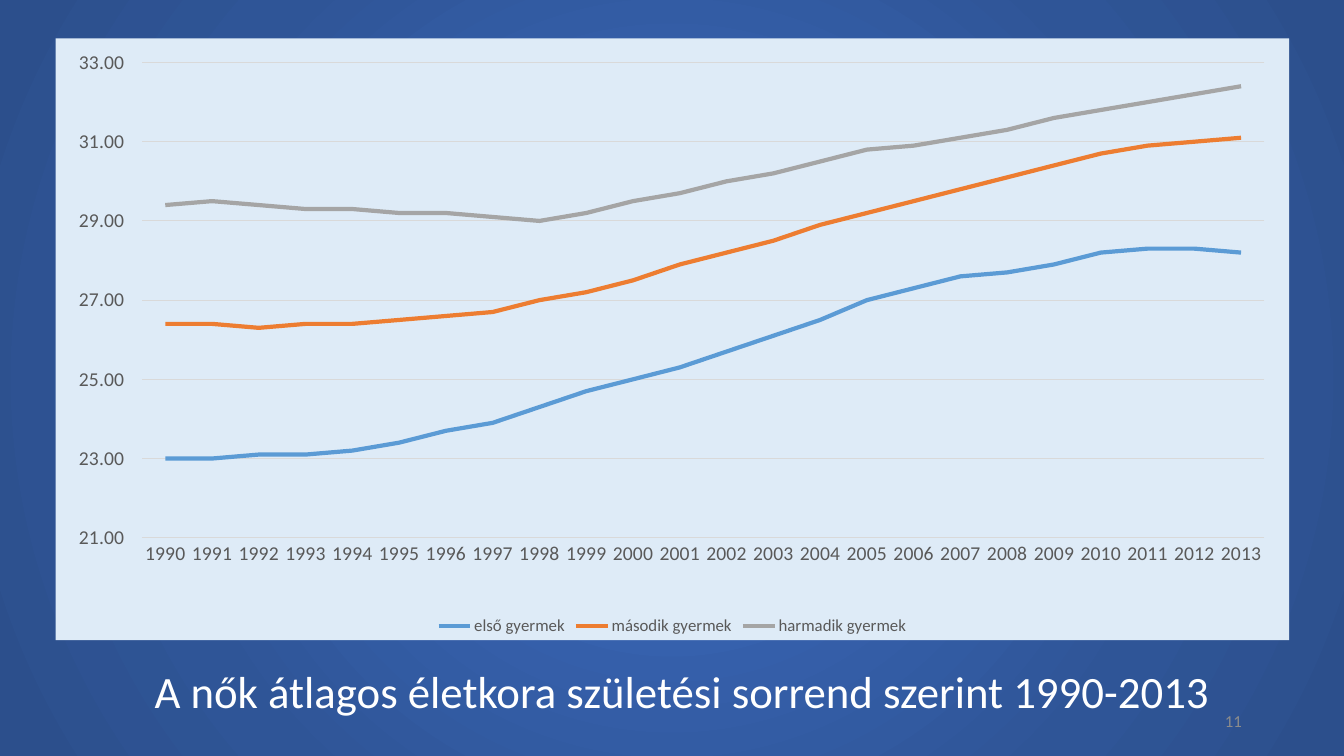
import pptx
import pptx.chart.data
import pptx.dml.color
import pptx.enum.chart
import pptx.enum.dml
import pptx.enum.text
import pptx.oxml
import pptx.oxml.ns
import pptx.util

Cm, Pt = pptx.util.Cm, pptx.util.Pt
RGB = pptx.dml.color.RGBColor

TITLE = "A nők átlagos életkora születési sorrend szerint 1990-2013"
PAGE = "11"
FONT = "Calibri"
WHITE = RGB(0xFF, 0xFF, 0xFF)
GREY = RGB(0x8C, 0x8C, 0x8C)
DARK = RGB(0x59, 0x59, 0x59)
GRID = RGB(0xD9, 0xD9, 0xD9)
PALE = RGB(0xDE, 0xEB, 0xF7)
BLUE = RGB(0x5B, 0x9B, 0xD5)
ORANGE = RGB(0xED, 0x7D, 0x31)
SILVER = RGB(0xA5, 0xA5, 0xA5)
STOPS = [(0, RGB(0x38, 0x64, 0xB3)), (23, RGB(0x38, 0x64, 0xB3)),
         (69, RGB(0x2F, 0x55, 0x97)), (97, RGB(0x2C, 0x4F, 0x8C))]

YEARS = [str(year) for year in range(1990, 2014)]
SERIES = [
    ("első gyermek", BLUE,
     [23, 23, 23.1, 23.1, 23.2, 23.4, 23.7, 23.9, 24.3, 24.7, 25, 25.3,
      25.7, 26.1, 26.5, 27, 27.3, 27.6, 27.7, 27.9, 28.2, 28.3, 28.3, 28.2]),
    ("második gyermek", ORANGE,
     [26.4, 26.4, 26.3, 26.4, 26.4, 26.5, 26.6, 26.7, 27, 27.2, 27.5, 27.9,
      28.2, 28.5, 28.9, 29.2, 29.5, 29.8, 30.1, 30.4, 30.7, 30.9, 31, 31.1]),
    ("harmadik gyermek", SILVER,
     [29.4, 29.5, 29.4, 29.3, 29.3, 29.2, 29.2, 29.1, 29, 29.2, 29.5, 29.7,
      30, 30.2, 30.5, 30.8, 30.9, 31.1, 31.3, 31.6, 31.8, 32, 32.2, 32.4]),
]
# Plot area as shares of the chart frame
PLOT = {"x": 0.07, "y": 0.04, "w": 0.91, "h": 0.79}


def style(font, size, color):
    font.name = FONT
    font.size = Pt(size)
    font.color.rgb = color


def paint(slide):
    """Fill the background with a gradient that spreads from the centre."""
    fill = slide.background.fill
    fill.gradient()
    stops = "".join(f'<a:gs pos="{pos * 1000}"><a:srgbClr val="{color}"/></a:gs>'
                    for pos, color in STOPS)
    grad = pptx.oxml.parse_xml(
        f'<a:gradFill {pptx.oxml.ns.nsdecls("a")} rotWithShape="1">'
        f'<a:gsLst>{stops}</a:gsLst><a:path path="circle">'
        '<a:fillToRect l="50000" t="50000" r="50000" b="50000"/>'
        '</a:path></a:gradFill>')
    old = slide.element.find(".//" + pptx.oxml.ns.qn("a:gradFill"))
    old.getparent().replace(old, grad)


def write(slide, text, box, size, color, align, anchor):
    frame = slide.shapes.add_textbox(*map(Cm, box)).text_frame
    frame.word_wrap = True
    frame.vertical_anchor = anchor
    frame.text = text
    para = frame.paragraphs[0]
    para.alignment = align
    style(para.runs[0].font, size, color)
    return frame


def frame_plot(chart):
    """Fill the chart frame and fix the place of its plot area."""
    space = chart.element
    names = pptx.oxml.ns.nsdecls("c", "a")
    space.find(pptx.oxml.ns.qn("c:chart")).addnext(pptx.oxml.parse_xml(
        f'<c:spPr {names}><a:solidFill><a:srgbClr val="{PALE}"/></a:solidFill>'
        '<a:ln><a:noFill/></a:ln></c:spPr>'))
    area = space.find(".//" + pptx.oxml.ns.qn("c:plotArea"))
    old = area.find(pptx.oxml.ns.qn("c:layout"))
    if old is not None:
        area.remove(old)
    sizes = "".join(f'<c:{key} val="{part}"/>' for key, part in PLOT.items())
    area.insert(0, pptx.oxml.parse_xml(
        f'<c:layout {names}><c:manualLayout><c:layoutTarget val="inner"/>'
        f'<c:xMode val="edge"/><c:yMode val="edge"/>{sizes}'
        '</c:manualLayout></c:layout>'))


def draw(slide, box):
    kinds = pptx.enum.chart
    data = pptx.chart.data.CategoryChartData(number_format="0.00")
    data.categories = YEARS
    for name, _, vals in SERIES:
        data.add_series(name, vals)
    chart = slide.shapes.add_chart(
        kinds.XL_CHART_TYPE.LINE, *map(Cm, box), data).chart
    chart.has_title = False
    style(chart.font, 10, DARK)
    chart.has_legend = True
    chart.legend.position = kinds.XL_LEGEND_POSITION.BOTTOM
    chart.legend.include_in_layout = False
    style(chart.legend.font, 12, DARK)

    years, ages = chart.category_axis, chart.value_axis
    for axis in (years, ages):
        axis.major_tick_mark = axis.minor_tick_mark = kinds.XL_TICK_MARK.NONE
        style(axis.tick_labels.font, 14, DARK)
    ages.minimum_scale, ages.maximum_scale, ages.major_unit = 21, 33, 2
    ages.tick_labels.number_format = "0.00___;"
    ages.tick_labels.number_format_is_linked = False
    ages.format.line.fill.background()
    for line in (years.format.line, ages.major_gridlines.format.line):
        line.color.rgb = GRID
        line.width = Pt(0.75)

    chart.plots[0].vary_by_categories = False
    for series, (_, color, _) in zip(chart.plots[0].series, SERIES):
        series.smooth = False
        series.marker.style = kinds.XL_MARKER_STYLE.NONE
        series.format.line.color.rgb = color
        series.format.line.width = Pt(3)
    frame_plot(chart)


def main():
    deck = pptx.Presentation()
    deck.slide_width, deck.slide_height = Cm(33.87), Cm(19.05)
    slide = deck.slides.add_slide(deck.slide_layouts[6])
    text = pptx.enum.text
    paint(slide)
    title = write(slide, TITLE, (2.82, 16.61, 28.75, 1.63), 32, WHITE,
                  text.PP_ALIGN.CENTER, text.MSO_ANCHOR.TOP)
    title.auto_size = text.MSO_AUTO_SIZE.SHAPE_TO_FIT_TEXT
    draw(slide, (1.4, 0.97, 31.09, 15.16))
    write(slide, PAGE, (23.93, 17.65, 7.62, 1.02), 12, GREY,
          text.PP_ALIGN.RIGHT, text.MSO_ANCHOR.MIDDLE)
    deck.save("out.pptx")


if __name__ == "__main__":
    main()
